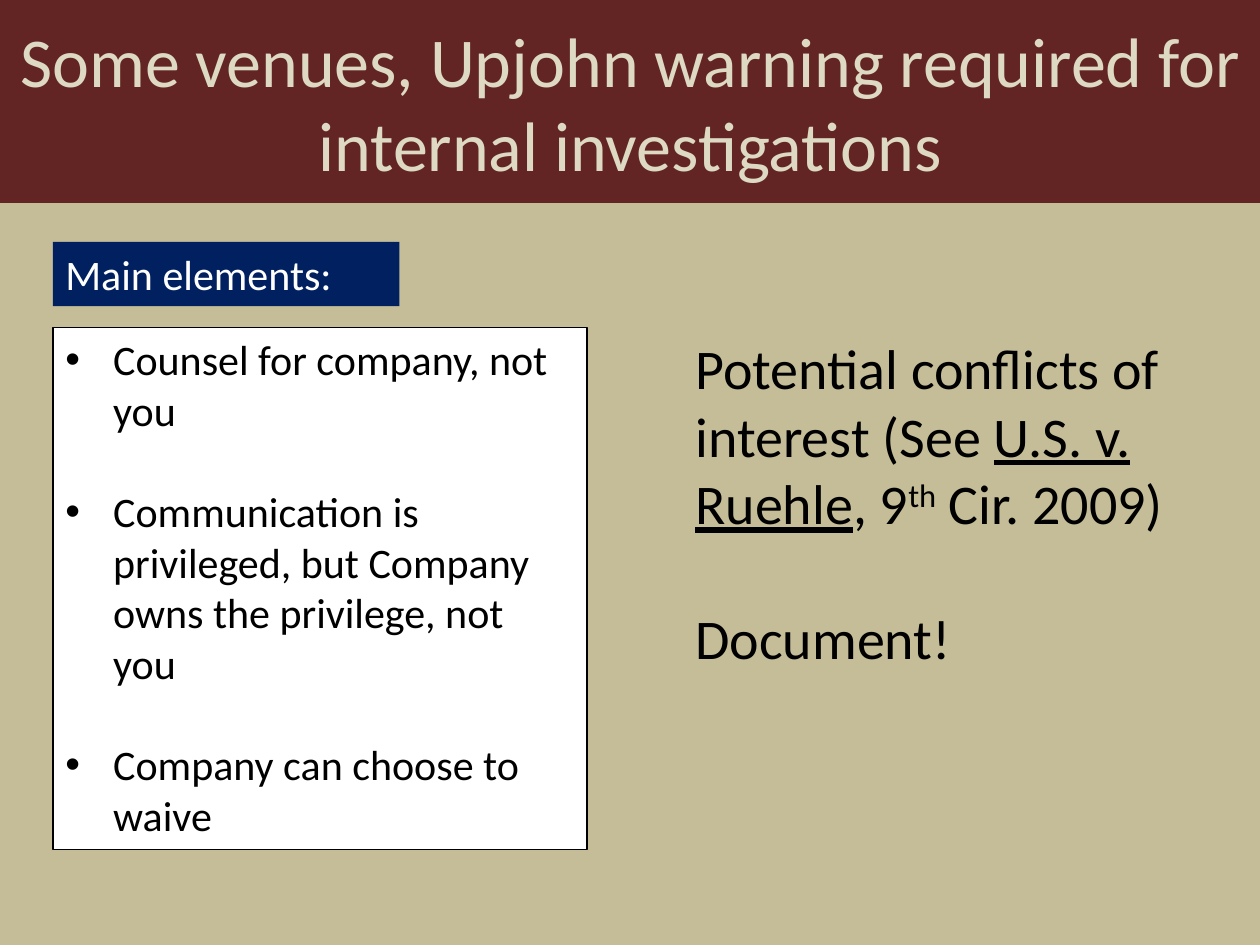
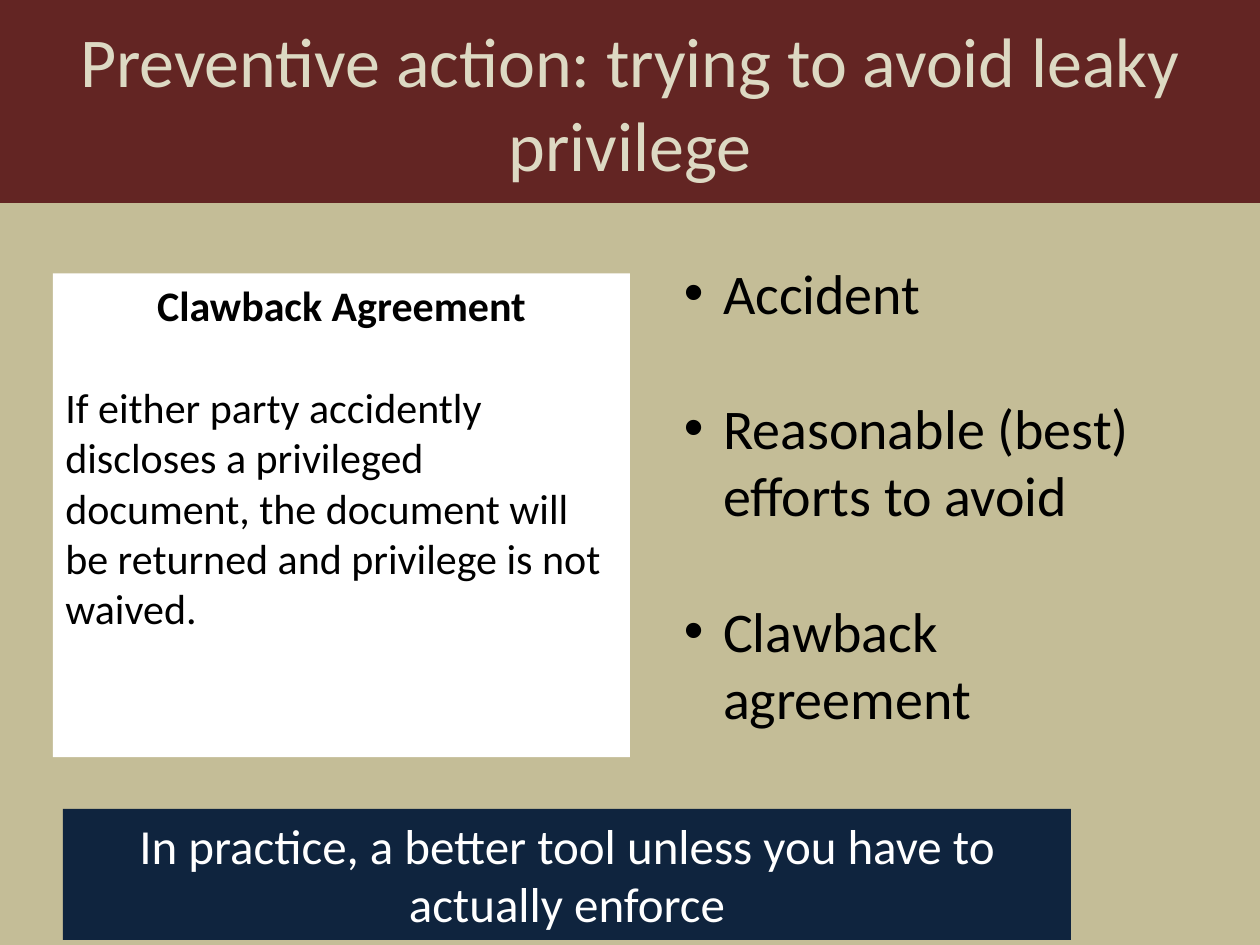
from dataclasses import dataclass, field
from typing import Any

from lxml.etree import SubElement
from pptx import Presentation
from pptx.dml.color import RGBColor
from pptx.enum.text import MSO_ANCHOR, PP_ALIGN
from pptx.oxml.ns import qn
from pptx.slide import Slide
from pptx.util import Inches, Pt

COLORS = {
    "sand": "C4BD97",
    "maroon": "632523",
    "cream": "DDD9C3",
    "white": "FFFFFF",
    "black": "000000",
    "blue": "002060",
    "navy": "0F243E",
}
FONT = "Calibri"
LINE_HEIGHT = 1.22  # one line of the font, relative to its size


@dataclass
class Run:
    text: str
    format: dict[str, Any] = field(default_factory=dict)
    superscript: bool = False


@dataclass
class Paragraph:
    runs: list[Run]
    centered: bool = False


@dataclass
class Panel:
    left: float
    top: float
    width: float
    height: float
    paragraphs: list[Paragraph]
    size: int
    fill: str | None = None
    color: str = "black"
    outline: str | None = None
    bullet_indent: float = 0
    anchor: MSO_ANCHOR = MSO_ANCHOR.TOP


def plain(text: str, centered: bool = False, **format: Any) -> Paragraph:
    """Return a paragraph that is a single run."""
    return Paragraph([Run(text, format)], centered)


def rgb(name: str) -> RGBColor:
    return RGBColor.from_string(COLORS[name])


def add_bullet(paragraph: Any, indent: float) -> None:
    properties = paragraph._p.get_or_add_pPr()
    properties.set("marL", str(Inches(indent)))
    properties.set("indent", str(-Inches(indent)))
    SubElement(properties, qn("a:buFont")).set("typeface", "Arial")
    SubElement(properties, qn("a:buChar")).set("char", "•")


def add_runs(paragraph: Any, runs: list[Run], panel: Panel) -> None:
    for part in runs:
        run = paragraph.add_run()
        run.text = part.text
        run.font.color.rgb = rgb(panel.color)
        formats = {"name": FONT, "size": Pt(panel.size)} | part.format
        for attribute, value in formats.items():
            setattr(run.font, attribute, value)
        if part.superscript:
            run._r.get_or_add_rPr().set("baseline", "30000")


def draw_panel(slide: Slide, panel: Panel) -> None:
    """Draw a text panel whose paragraphs are one line apart."""
    box = slide.shapes.add_textbox(
        *map(Inches, (panel.left, panel.top, panel.width, panel.height))
    )
    if panel.fill:
        box.fill.solid()
        box.fill.fore_color.rgb = rgb(panel.fill)
    if panel.outline:
        box.line.color.rgb = rgb(panel.outline)
        box.line.width = Pt(0.75)
    frame = box.text_frame
    frame.word_wrap = True
    frame.vertical_anchor = panel.anchor
    for index, content in enumerate(panel.paragraphs):
        paragraph = frame.add_paragraph() if index else frame.paragraphs[0]
        paragraph.alignment = PP_ALIGN.CENTER if content.centered else PP_ALIGN.LEFT
        if index:
            paragraph.space_before = Pt(round(panel.size * LINE_HEIGHT, 1))
        if panel.bullet_indent:
            add_bullet(paragraph, panel.bullet_indent)
        add_runs(paragraph, content.runs, panel)


def add_slide(deck: Any, title: str, panels: list[Panel]) -> None:
    slide = deck.slides.add_slide(deck.slide_layouts[6])
    background = slide.background.fill
    background.solid()
    background.fore_color.rgb = rgb("sand")
    title_band = Panel(0, 0, 10, 1.61, [plain(title, centered=True)], 40,
                       fill="maroon", color="cream", anchor=MSO_ANCHOR.MIDDLE)
    for panel in (title_band, *panels):
        draw_panel(slide, panel)


UPJOHN_PANELS = [
    Panel(0.42, 2.6, 4.24, 4.14, [
        plain("Counsel for company, not you"),
        plain("Communication is privileged, but Company owns the privilege, not you"),
        plain("Company can choose to waive"),
    ], 24, fill="white", outline="black", bullet_indent=0.38),
    Panel(0.42, 1.92, 2.75, 0.51, [plain("Main elements:")], 24,
          fill="blue", color="white"),
    Panel(5.42, 2.6, 4, 2.79, [
        Paragraph([
            Run("Potential conflicts of interest (See "),
            Run("U.S. v. Ruehle", {"underline": True}),
            Run(", 9"),
            Run("th", superscript=True),
            Run(" Cir. 2009)"),
        ]),
        plain("Document!"),
    ], 32),
]

CLAWBACK_PANELS = [
    Panel(5.33, 2, 4.08, 3.87, [
        plain("Accident"),
        plain("Reasonable (best) efforts to avoid"),
        plain("Clawback agreement"),
    ], 32, bullet_indent=0.31),
    Panel(0.5, 6.42, 8, 1.04, [
        plain("In practice, a better tool unless you have to actually enforce",
              centered=True),
    ], 28, fill="navy", color="white"),
    Panel(0.42, 2.17, 4.58, 3.84, [
        plain("Clawback Agreement", centered=True, bold=True),
        plain("If either party accidently discloses a privileged document, "
              "the document will be returned and privilege is not waived."),
    ], 24, fill="white"),
]


def main() -> None:
    deck = Presentation()
    deck.slide_width = Inches(10)
    deck.slide_height = Inches(7.5)
    add_slide(deck, "Some venues, Upjohn warning required for internal investigations",
              UPJOHN_PANELS)
    add_slide(deck, "Preventive action: trying to avoid leaky privilege",
              CLAWBACK_PANELS)
    deck.save("out.pptx")


if __name__ == "__main__":
    main()
